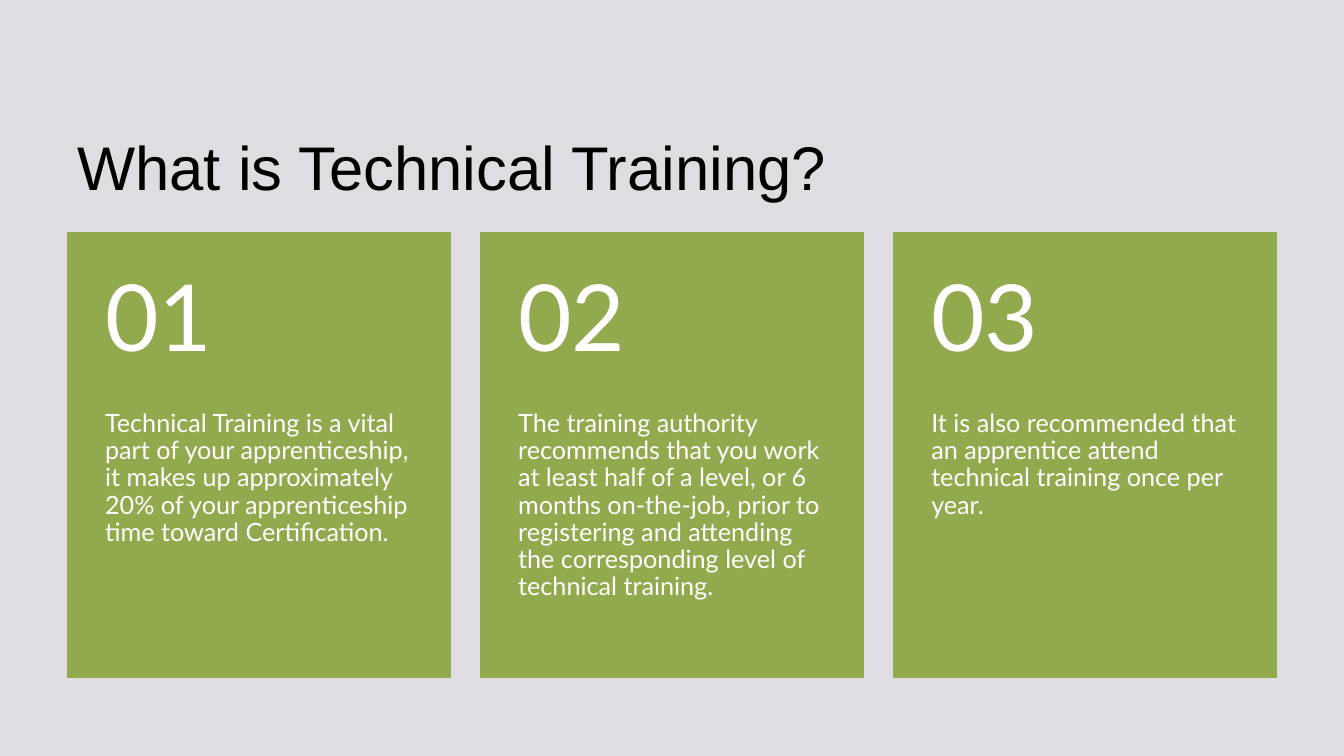
from pptx import Presentation
from pptx.dml.color import RGBColor
from pptx.enum.shapes import MSO_SHAPE as Shape
from pptx.enum.text import MSO_ANCHOR as Anchor, PP_ALIGN as Align
from pptx.util import Cm, Pt

BACKDROP = RGBColor(0xDF, 0xDD, 0xE2)
GREEN = RGBColor(0x92, 0xA9, 0x4E)
BLACK = RGBColor(0, 0, 0)
WHITE = RGBColor(0xFF, 0xFF, 0xFF)

LEFT = 1.7
CARD_TOP, CARD_WIDTH, CARD_HEIGHT = 5.86, 9.65, 11.2
CARD_PITCH = 10.41
NUMBER_HEIGHT = 4.49
SIDE_INSET = 0.95

REASONS = [
    "Technical Training is a vital part of your apprenticeship, it makes up "
    "approximately 20% of your apprenticeship time toward Certification.",
    "The training authority recommends that you work at least half of a level, "
    "or 6 months on-the-job, prior to registering and attending the "
    "corresponding level of technical training.",
    "It is also recommended that an apprentice attend technical training once "
    "per year.",
]

prs = Presentation()
prs.slide_width, prs.slide_height = Cm(33.87), Cm(19.05)
slide = prs.slides.add_slide(prs.slide_layouts[6])
slide.background.fill.solid()
slide.background.fill.fore_color.rgb = BACKDROP


def add_text(text, box, insets, anchor, font_name, size, color, spacing):
    frame = slide.shapes.add_textbox(*map(Cm, box)).text_frame
    frame.word_wrap = True
    frame.vertical_anchor = anchor
    side, top, bottom = insets
    frame.margin_left = frame.margin_right = Cm(side)
    frame.margin_top, frame.margin_bottom = Cm(top), Cm(bottom)
    paragraph = frame.paragraphs[0]
    paragraph.text = text
    paragraph.alignment = Align.LEFT
    paragraph.line_spacing = spacing
    paragraph.font.name = font_name
    paragraph.font.size = Pt(size)
    paragraph.font.color.rgb = color


add_text("What is Technical Training?", (LEFT, 1.55, 30.48, 3.68),
         (0.25, 0.13, 0.13), Anchor.BOTTOM, "Arial", 44, BLACK, 1.0)

for index, reason in enumerate(REASONS):
    left = LEFT + index * CARD_PITCH
    card = slide.shapes.add_shape(Shape.RECTANGLE, Cm(left), Cm(CARD_TOP),
                                  Cm(CARD_WIDTH), Cm(CARD_HEIGHT))
    card.shadow.inherit = False
    card.fill.solid()
    card.fill.fore_color.rgb = GREEN
    card.line.color.rgb = GREEN
    card.line.width = Pt(1)

    add_text(reason,
             (left, CARD_TOP + NUMBER_HEIGHT, CARD_WIDTH, CARD_HEIGHT - NUMBER_HEIGHT),
             (SIDE_INSET, 0, 0.91), Anchor.TOP, "Lato", 18, WHITE, 0.9)
    add_text(f"{index + 1:02}", (left, CARD_TOP, CARD_WIDTH, NUMBER_HEIGHT),
             (SIDE_INSET, 0.46, 0.46), Anchor.MIDDLE, "Lato", 66, WHITE, 0.9)

prs.save("out.pptx")
